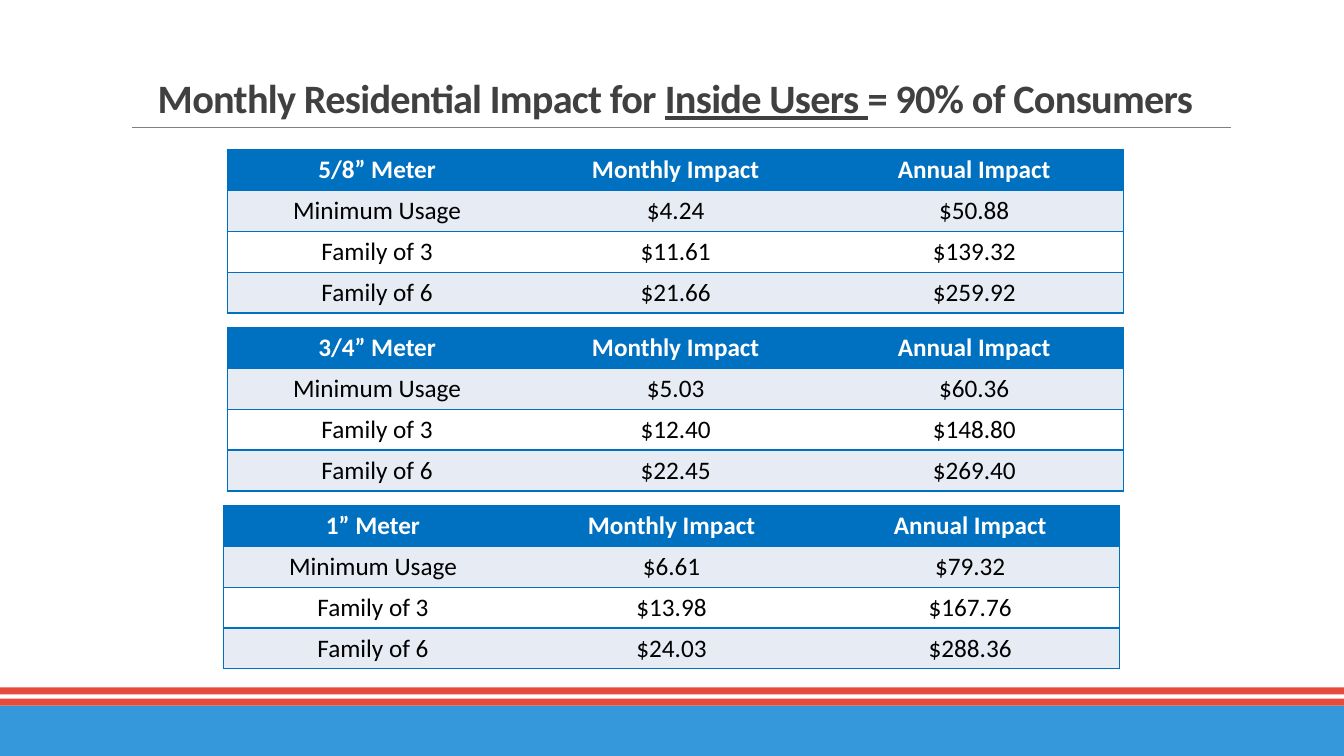
from dataclasses import dataclass
from lxml.etree import SubElement
from pptx import Presentation
from pptx.dml.color import RGBColor as RGB
from pptx.enum.shapes import MSO_CONNECTOR as CONN, MSO_SHAPE as SHAPE
from pptx.enum.text import MSO_ANCHOR as ANCHOR, PP_ALIGN as ALIGN
from pptx.oxml.ns import qn
from pptx.util import Pt


@dataclass(frozen=True)
class Theme:
    font: str = "Calibri"
    title_size: float = 28.8
    cell_size: float = 18
    title: str = "404040"
    header: str = "0070C0"
    header_text: str = "FFFFFF"
    body_text: str = "000000"
    band: str = "E7EBF4"
    plain: str = "FFFFFF"
    rule: str = "808080"
    footer: str = "3498DB"
    stripe: str = "E64B3B"


T = Theme()


def add_text(p, text, size=T.cell_size, color=T.body_text, bold=False,
             underline=False, spacing=0):
    p.alignment = ALIGN.CENTER
    r = p.add_run()
    r.text = text
    f = r.font
    f.name, f.size, f.bold, f.underline = T.font, Pt(size), bold, underline
    f.color.rgb = RGB.from_string(color)
    if spacing:
        r._r.get_or_add_rPr().set("spc", str(round(spacing * 100)))


def set_border(cell, side, color=None):
    ln = SubElement(cell._tc.get_or_add_tcPr(), qn(f"a:ln{side}"), w=str(Pt(1)))
    if color:
        fill = SubElement(ln, qn("a:solidFill"))
        SubElement(fill, qn("a:srgbClr"), val=color)
    else:
        SubElement(ln, qn("a:noFill"))


prs = Presentation()
prs.slide_width, prs.slide_height = Pt(960), Pt(540)
s = prs.slides.add_slide(prs.slide_layouts[6])

for top, height, color in [(504, 36, T.footer), (499, 5, T.stripe), (491, 5, T.stripe)]:
    sp = s.shapes.add_shape(SHAPE.RECTANGLE, 0, Pt(top), prs.slide_width, Pt(height))
    sp.shadow.inherit = False
    sp.fill.solid()
    sp.fill.fore_color.rgb = RGB.from_string(color)
    sp.line.fill.background()

rule = s.shapes.add_connector(CONN.STRAIGHT, Pt(94.3), Pt(91), Pt(879), Pt(91))
rule.line.color.rgb = RGB.from_string(T.rule)
rule.line.width = Pt(0.5)
SubElement(rule._element.spPr, qn("a:effectLst"))

tf = s.shapes.add_textbox(Pt(86.4), Pt(22.3), Pt(792), Pt(68.4)).text_frame
tf.word_wrap = True
tf.vertical_anchor = ANCHOR.BOTTOM
p = tf.paragraphs[0]
p.line_spacing = 0.85
for text, underline in [("Monthly Residential Impact for ", False),
                        ("Inside Users ", True),
                        ("= 90% of Consumers", False)]:
    add_text(p, text, size=T.title_size, color=T.title, bold=True,
             underline=underline, spacing=-0.5)

usages = ["Minimum Usage", "Family of 3", "Family of 6"]
meters = [("5/8” Meter", 162.7, [4.24, 11.61, 21.66]),
          ("3/4” Meter", 162.7, [5.03, 12.40, 22.45]),
          ("1” Meter", 159.8, [6.61, 13.98, 24.03])]
first_top, pitch, col_width, row_height = 106.8, 127.1, 213.3, 29.2

for i, (meter, left, impacts) in enumerate(meters):
    rows = [(meter, "Monthly Impact", "Annual Impact")]
    rows += [(usage, f"${impact:.2f}", f"${impact * 12:.2f}")
             for usage, impact in zip(usages, impacts)]
    tbl = s.shapes.add_table(len(rows), 3, Pt(left), Pt(first_top + i * pitch),
                             Pt(3 * col_width), Pt(len(rows) * row_height)).table
    tbl.horz_banding = False
    for col in tbl.columns:
        col.width = Pt(col_width)
    for y, row in enumerate(rows):
        tbl.rows[y].height = Pt(row_height)
        header = y == 0
        fill = T.header if header else T.band if y % 2 else T.plain
        for x, text in enumerate(row):
            cell = tbl.cell(y, x)
            set_border(cell, "L", T.header if x == 0 else None)
            set_border(cell, "R", T.header if x == 2 else None)
            set_border(cell, "T", T.header)
            set_border(cell, "B", T.header)
            cell.fill.solid()
            cell.fill.fore_color.rgb = RGB.from_string(fill)
            add_text(cell.text_frame.paragraphs[0], text, bold=header,
                     color=T.header_text if header else T.body_text)

prs.save("out.pptx")
